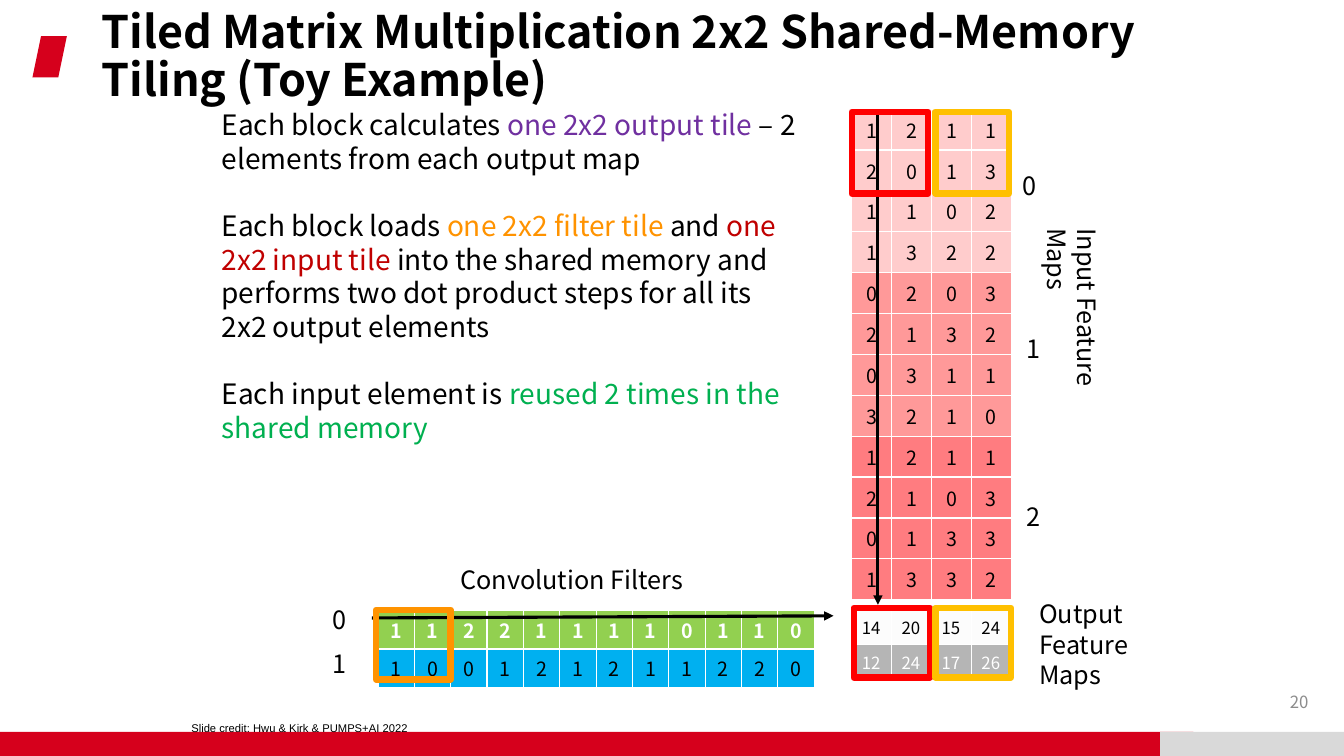
from lxml.etree import SubElement
from pptx import Presentation
from pptx.dml.color import RGBColor
from pptx.enum.shapes import MSO_CONNECTOR, MSO_SHAPE
from pptx.enum.text import MSO_ANCHOR, MSO_AUTO_SIZE, PP_ALIGN
from pptx.oxml.ns import qn
from pptx.util import Pt

FONT = "Noto Sans CJK SC"
COLORS = {
    "black": "000000", "white": "FFFFFF", "crimson": "D6001C", "silver": "D9D9D9",
    "purple": "7030A0", "orange": "FF9300", "dark red": "C00000", "dark green": "00B050",
    "filter 0": "92D050", "filter 1": "00B0F0",
    "map 0": "FFCCCC", "map 1": "FF9999", "map 2": "FF7C80",
    "output 0": "FCFCFC", "output 1": "B5B5B5",
    "red": "FF0000", "gold": "FFC000", "gray": "8C8C8C",
}
FILTERS = ["112211110110", "100121211220"]
INPUT_MAPS = ["1211", "2013", "1102", "1322", "0203", "2132",
              "0311", "3210", "1211", "2103", "0133", "1332"]
OUTPUT_MAPS = [["14", "20", "15", "24"], ["12", "24", "17", "26"]]
EXPLANATION = [
    [("Each block calculates ", "black"), ("one 2x2 output tile ", "purple"),
     ("– 2 elements from each output map", "black")],
    [("Each block loads ", "black"), ("one 2x2 filter tile", "orange"), (" and ", "black"),
     ("one 2x2 input tile", "dark red"),
     (" into the shared memory and performs two dot product steps"
      " for all its 2x2 output elements", "black")],
    [("Each input element is ", "black"),
     ("reused 2 times in the shared memory", "dark green")],
]


def rgb(name):
    return RGBColor.from_string(COLORS[name])


def write(paragraph, text, size=18, color="black", bold=False, font=FONT, align=PP_ALIGN.LEFT):
    paragraph.alignment = align
    run = paragraph.add_run()
    run.text = text
    run.font.name = font
    run.font.size = Pt(size)
    run.font.bold = bold
    run.font.color.rgb = rgb(color)


def add_text_box(slide, left, top, width, height, wrap=True):
    box = slide.shapes.add_textbox(Pt(left), Pt(top), Pt(width), Pt(height))
    box.text_frame.auto_size = MSO_AUTO_SIZE.NONE
    box.text_frame.word_wrap = wrap
    return box


def add_label(slide, text, left, top, width, height=29, rotation=0, wrap=True, **text_format):
    box = add_text_box(slide, left, top, width, height, wrap)
    box.rotation = rotation
    write(box.text_frame.paragraphs[0], text, **text_format)


def add_block(slide, kind, left, top, width, height, color):
    shape = slide.shapes.add_shape(kind, Pt(left), Pt(top), Pt(width), Pt(height))
    shape.shadow.inherit = False
    shape.fill.solid()
    shape.fill.fore_color.rgb = rgb(color)
    shape.line.fill.background()


def add_tile_frame(slide, left, top, width, height, color):
    frame = slide.shapes.add_shape(MSO_SHAPE.RECTANGLE, Pt(left), Pt(top), Pt(width), Pt(height))
    frame.shadow.inherit = False
    frame.fill.background()
    frame.line.color.rgb = rgb(color)
    frame.line.width = Pt(4.5)


def add_arrow(slide, start_x, start_y, end_x, end_y):
    arrow = slide.shapes.add_connector(
        MSO_CONNECTOR.STRAIGHT, Pt(start_x), Pt(start_y), Pt(end_x), Pt(end_y))
    arrow.line.color.rgb = rgb("black")
    arrow.line.width = Pt(2.25)
    SubElement(arrow.line._get_or_add_ln(), qn("a:tailEnd"), type="triangle")
    SubElement(arrow._element.spPr, qn("a:effectLst"))


def add_matrix(slide, rows, left, top, column_width, row_height, fills, formats,
               anchor=MSO_ANCHOR.MIDDLE):
    """Draw a number table; fills and formats hold one entry per row."""
    column_count = len(rows[0])
    table = slide.shapes.add_table(
        len(rows), column_count, Pt(left), Pt(top),
        Pt(column_width * column_count), Pt(row_height * len(rows))).table
    table.first_row = table.horz_banding = False
    for column in table.columns:
        column.width = Pt(column_width)
    for row, values, fill, text_format in zip(table.rows, rows, fills, formats):
        row.height = Pt(row_height)
        for cell, value in zip(row.cells, values):
            cell.fill.solid()
            cell.fill.fore_color.rgb = rgb(fill)
            cell.vertical_anchor = anchor
            write(cell.text_frame.paragraphs[0], value, **text_format)


def add_title(slide, text):
    title = slide.shapes.title
    title.left, title.top, title.width, title.height = Pt(65.5), Pt(-10.8), Pt(828), Pt(104.4)
    title.text_frame.vertical_anchor = MSO_ANCHOR.MIDDLE
    title.text_frame.word_wrap = True
    title.text_frame.auto_size = MSO_AUTO_SIZE.NONE
    paragraph = title.text_frame.paragraphs[0]
    paragraph.line_spacing = 0.9
    write(paragraph, text, size=32, bold=True)


def add_explanation(slide):
    frame = add_text_box(slide, 151.2, 73.4, 427.7, 250).text_frame
    for index, parts in enumerate(EXPLANATION):
        paragraph = frame.add_paragraph() if index else frame.paragraphs[0]
        paragraph.space_before = Pt(24 if index else 0)
        for text, color in parts:
            write(paragraph, text, size=20, color=color)


def main():
    presentation = Presentation()
    presentation.slide_width, presentation.slide_height = Pt(960), Pt(540)
    slide = presentation.slides.add_slide(presentation.slide_layouts[5])

    add_block(slide, MSO_SHAPE.RECTANGLE, 0, 522.7, 852.5, 17.3, "crimson")
    add_block(slide, MSO_SHAPE.RECTANGLE, 828.7, 522.7, 131.3, 17.3, "silver")
    add_block(slide, MSO_SHAPE.PARALLELOGRAM, 23.2, 25.8, 24.6, 29.5, "crimson")
    add_title(slide, "Tiled Matrix Multiplication 2x2 Shared-Memory Tiling (Toy Example)")

    digit = {"size": 14, "align": PP_ALIGN.CENTER}
    add_matrix(slide, FILTERS, 270, 435.9, 25.98, 27.2, ["filter 0", "filter 1"],
               [{**digit, "color": "white", "bold": True}, digit])
    map_fills = [f"map {row // 4}" for row in range(len(INPUT_MAPS))]
    add_matrix(slide, INPUT_MAPS, 608.4, 78, 28.5, 29.2, map_fills, [digit] * len(INPUT_MAPS))
    add_matrix(slide, OUTPUT_MAPS, 608.4, 435.9, 28.5, 24.2, ["output 0", "output 1"],
               [{"size": 12}, {"size": 12, "color": "white"}], anchor=MSO_ANCHOR.TOP)

    add_label(slide, "Input Feature Maps", 697.5, 220.5, 158, rotation=90)
    add_label(slide, "Convolution Filters", 321.8, 399.6, 203.8)
    add_label(slide, "Output Feature Maps", 735.1, 424.1, 102.2, 72.7)
    for text, left, top in [("0", 723.6, 118.1), ("1", 725.8, 234.7), ("2", 725.8, 354.2),
                            ("0", 230.4, 428.4), ("1", 230.4, 459.4)]:
        add_label(slide, text, left, top, 26.6)
    add_explanation(slide)

    add_arrow(slide, 265.7, 441.4, 595.4, 439.9)
    add_arrow(slide, 627.1, 79.2, 627.1, 432)
    for left, top, width, height, color in [
            (608.4, 79.9, 54.7, 58.3, "red"), (668.2, 79.9, 52.6, 58.3, "gold"),
            (609.8, 434.2, 54.7, 49.7, "red"), (668.2, 434.2, 54, 49.7, "gold"),
            (268.6, 435.6, 53.3, 49.7, "orange")]:
        add_tile_frame(slide, left, top, width, height, color)

    add_label(slide, "20", 725.8, 490.3, 216, size=12, color="gray", align=PP_ALIGN.RIGHT)
    add_label(slide, "Slide credit: Hwu & Kirk & PUMPS+AI 2022", 129.6, 511.9, 170.6, 17.3,
              wrap=False, size=8, font="Arial")
    presentation.save("out.pptx")


if __name__ == "__main__":
    main()
